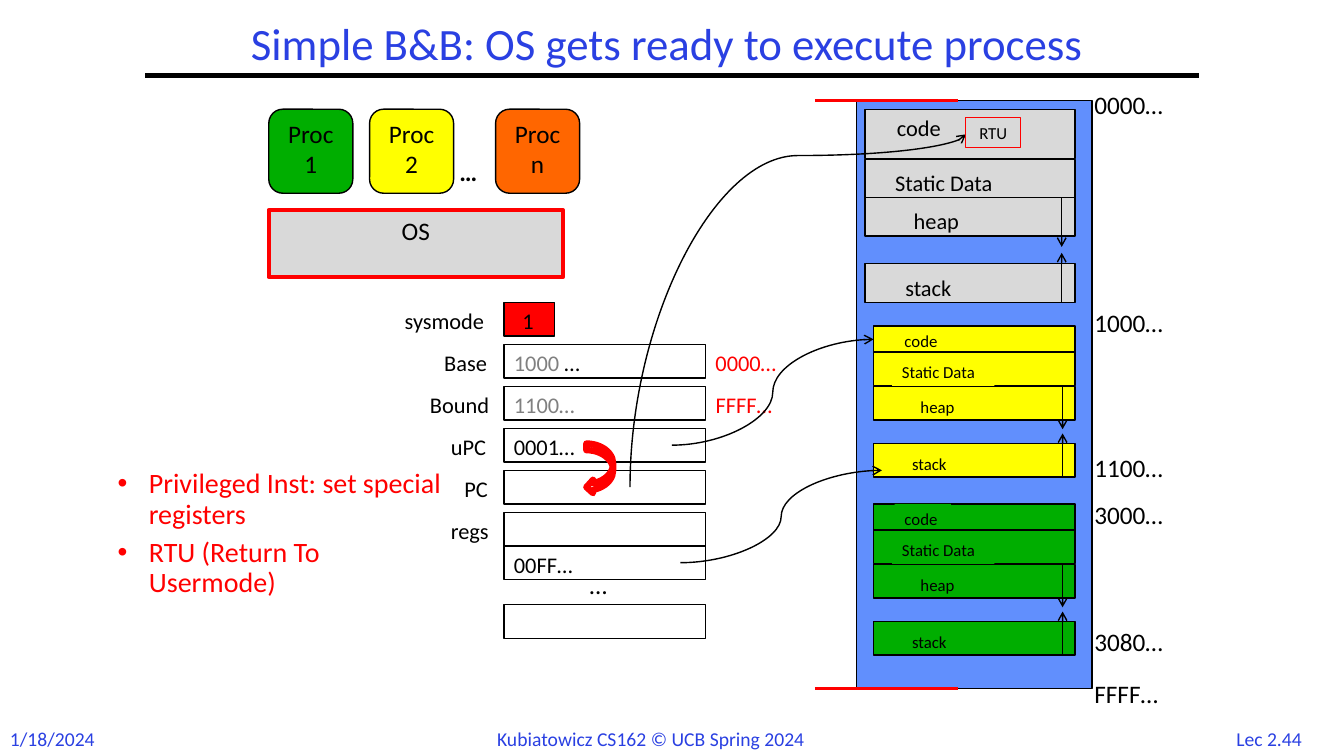
"""Build the slide on how an OS prepares to run a process with base and bound."""
import pptx
import pptx.chart.data
import pptx.dml.color
import pptx.enum.shapes
import pptx.enum.text
import pptx.oxml
import pptx.oxml.ns
import pptx.util

WIDTH, HEIGHT = 13.333, 7.5
COLUMNS, ROWS = 160, 90
FONT = "Calibri"
COLOURS = {"black": "000000", "blue": "2A40E2", "red": "FF0000", "grey": "D9D9D9",
           "green": "00AE00", "yellow": "FFFF00", "orange": "FF6600", "memory": "618FFD",
           "white": "FFFFFF", "faded": "808080"}
LABEL_ROWS = {18: 4.8, 16: 4.4, 14: 4.1, 12: 3.6}

TITLE = "Simple B&B: OS gets ready to execute process "
BULLETS = ["Privileged Inst: set special registers", "RTU (Return To Usermode)"]
FOOTERS = [("1/18/2024", 0, 12.8), ("Kubiatowicz CS162 © UCB Spring 2024", 58, 44.2),
           ("Lec 2.44", 146, 11.6)]
PROCESSES = [("Proc 1", 32, "green"), ("Proc 2", 44, "yellow"), ("Proc n", 59, "orange")]
ADDRESSES = [("0000…", 10, 12.2), ("1000…", 36, 12.2), ("1100…", 53.2, 12),
             ("3000…", 58.8, 12.2), ("3080…", 74, 12.2), ("FFFF…", 80.2, 12.8)]
REGISTERS = [
    (36, 6, "red", ("sysmode", 13.2), [("1", "black")], 61, 4),
    (41, 24, None, ("Base", 8.5), [("1000 ", "faded"), ("…", "black")], 60, 11.9),
    (46, 24, None, ("Bound", 10.2), [("1100…", "faded")], 60, 10.9),
    (51, 24, None, ("uPC", 7.7), [("0001…", "black")], 60, 11),
    (56, 24, None, ("PC", 6.1), [], 60, 0),
    (61, 24, None, ("regs", 7.7), [], 60, 0),
    (65, 24, None, None, [("00FF…", "black")], 60, 11.4),
    (72, 24, None, None, [], 60, 0),
]
NEXT_VALUES = [("0000…", 41, 11), ("FFFF…", 46, 11.6)]

OS_SEGMENTS = [("code", 0, 5.9, 2.6, 0, 8.3), ("Static Data", 6, 4.6, 2.4, 0.6, 15.6),
               ("heap", 10.5, 4.6, 4.6, 0.6, 8.4), ("stack", 18.4, 4.6, 3.6, 0.6, 8.8)]
USER_SEGMENTS = [("code", 0, 3.1, 2.5, 0, 6.7), ("Static Data", 3.1, 4, 2.2, 0.6, 12.2),
                 ("heap", 7.2, 4, 4.4, 0.6, 6.8), ("stack", 14, 4, 3.4, 0.6, 7.1)]
IMAGES = [
    ("grey", 103, 13, 25, 16, OS_SEGMENTS, (), 126.4, ((23, 17.1), (10.5, 16.4))),
    ("yellow", 104, 38.8, 24, 12, USER_SEGMENTS, ("Static Data",), 126.5,
     ((18, 12.8), (7.2, 12.3))),
    ("green", 104, 60, 24, 12, USER_SEGMENTS, ("code", "Static Data"), 126.5,
     ((18, 12.8), (7.2, 12.3))),
]

deck = pptx.Presentation()
deck.slide_width = pptx.util.Inches(WIDTH)
deck.slide_height = pptx.util.Inches(HEIGHT)
page = deck.slides.add_slide(deck.slide_layouts[1])
shape_kind = pptx.enum.shapes.MSO_SHAPE
line_kind = pptx.enum.shapes.MSO_CONNECTOR
alignment = pptx.enum.text.PP_ALIGN


def grid(left, top, *more):
    """Turn alternating columns and rows into lengths on the slide."""
    shares = (WIDTH / COLUMNS, HEIGHT / ROWS)
    return [pptx.util.Inches(value * shares[index % 2])
            for index, value in enumerate((left, top, *more))]


def colour(name):
    """Look up a colour by name."""
    return pptx.dml.color.RGBColor.from_string(COLOURS[name])


def style(span, size, name, bold=False):
    """Format one run."""
    span.font.name, span.font.size = FONT, pptx.util.Pt(size)
    span.font.bold = bold
    span.font.color.rgb = colour(name)


def label(spans, left, top, width, size, fill=None, bold=False):
    """Add a one-line text made of (text, colour) spans."""
    box = page.shapes.add_textbox(*grid(left, top, width, LABEL_ROWS[size]))
    box.text_frame.word_wrap = False
    box.text_frame.auto_size = pptx.enum.text.MSO_AUTO_SIZE.SHAPE_TO_FIT_TEXT
    for text, name in spans:
        span = box.text_frame.paragraphs[0].add_run()
        span.text = text
        style(span, size, name, bold)
    if fill:
        box.fill.solid()
        box.fill.fore_color.rgb = colour(fill)


def block(kind, left, top, width, height, fill=None, line="black", weight=1, text="", size=18):
    """Add an outlined shape with optional fill and text."""
    box = page.shapes.add_shape(kind, *grid(left, top, width, height))
    box.shadow.inherit = False
    if fill:
        box.fill.solid()
        box.fill.fore_color.rgb = colour(fill)
    else:
        box.fill.background()
    box.line.color.rgb = colour(line)
    box.line.width = pptx.util.Pt(weight)
    if text:
        box.text_frame.text = text
        box.text_frame.vertical_anchor = pptx.enum.text.MSO_ANCHOR.TOP
        box.text_frame.paragraphs[0].alignment = alignment.CENTER
        style(box.text_frame.paragraphs[0].runs[0], size, "black")
    return box


def link(kind, ends, name="black", weight=1, arrow=True):
    """Add a connector, with an open arrowhead if wanted."""
    line = page.shapes.add_connector(kind, *grid(*ends))
    line.line.color.rgb = colour(name)
    line.line.width = pptx.util.Pt(weight)
    if arrow:
        head = pptx.oxml.ns.qn("a:tailEnd")
        line.line._get_or_add_ln().append(line._element.makeelement(head, {"type": "arrow"}))
    effects = pptx.oxml.ns.qn("a:effectLst")
    line._element.spPr.append(line._element.makeelement(effects, {}))
    return line


def fill_placeholder(box, lines, place, size, name):
    """Move a placeholder and set its lines."""
    box.left, box.top, box.width, box.height = grid(*place)
    box.text_frame.text = "\n".join(lines)
    box.text_frame.auto_size = pptx.enum.text.MSO_AUTO_SIZE.NONE
    for para in box.text_frame.paragraphs:
        para.line_spacing = 0.9
        style(para.runs[0], size, name)
    return box.text_frame.paragraphs


for para in fill_placeholder(page.shapes.title, [TITLE], (22, 2, 116, 7), 32, "blue"):
    para.alignment = alignment.CENTER
for para in fill_placeholder(page.placeholders[1], BULLETS, (12.8, 55.3, 41, 14), 20, "red"):
    para.space_before = pptx.util.Pt(6)
    properties = para._p.get_or_add_pPr()
    indent = pptx.util.Inches(0.31)
    properties.set("marL", str(indent))
    properties.set("indent", str(-indent))
    bullet = properties.makeelement(pptx.oxml.ns.qn("a:buChar"), {"char": "•"})
    properties.append(bullet)

link(line_kind.STRAIGHT, (17.3, 9, 142.7, 9), weight=3, arrow=False)
for text, left, width in FOOTERS:
    label([(text, "blue")], left, 85.9, width, 14)

block(shape_kind.RECTANGLE, 32, 25, 35, 8, "grey", "red", 3, "OS")
for text, left, fill in PROCESSES:
    block(shape_kind.ROUNDED_RECTANGLE, left, 13, 10, 10, fill, text=text)
label([("…", "black")], 53.5, 18, 5.4, 18, bold=True)

block(shape_kind.RECTANGLE, 102, 12, 28, 70, "memory")
for fill, left, top, width, size, segments, filled, arrow_left, arrows in IMAGES:
    for text, row, height, indent, drop, label_width in segments:
        block(shape_kind.RECTANGLE, left, top + row, width, height, fill)
        label([(text, "black")], left + indent, top + row + drop, label_width, size,
              fill if text in filled else None)
    for start, end in arrows:
        link(line_kind.STRAIGHT, (arrow_left, top + start, arrow_left, top + end))
for text, top, width in ADDRESSES:
    label([(text, "black")], 129.1, top, width, 18)

for top, width, fill, name, value, value_left, value_width in REGISTERS:
    block(shape_kind.RECTANGLE, 60, top, width, 4, fill)
    if name:
        label([(name[0], "black")], 60.2 - name[1], top, name[1], 16)
    if value:
        label(value, value_left, top, value_width, 16)
label([("…", "black")], 69, 67.2, 5.4, 18)
for text, top, width in NEXT_VALUES:
    label([(text, "red")], 84, top, width, 16)

for top in (12, 82):
    link(line_kind.STRAIGHT, (97, top, 114, top), "red", 2.25, arrow=False)
link(line_kind.CURVE, (80, 53, 104, 40.4))
link(line_kind.CURVE, (81, 67, 105, 56))
to_code = link(line_kind.CURVE, (116, 57, 74, 17))
to_code._element.spPr.find(pptx.oxml.ns.qn("a:xfrm")).set("rot", "5400000")
bends = to_code._element.spPr.find(pptx.oxml.ns.qn("a:prstGeom")).get_or_add_avLst()
bends.append(bends.makeelement(pptx.oxml.ns.qn("a:gd"), {"name": "adj1", "fmla": "val 94000"}))

block(shape_kind.RECTANGLE, 115, 14, 6.5, 3.6, line="red", weight=0.75, text="RTU", size=12)
block(shape_kind.CURVED_LEFT_ARROW, 69.8, 52.8, 3.2, 6, "white", "red", 4.5)

deck.save("out.pptx")
